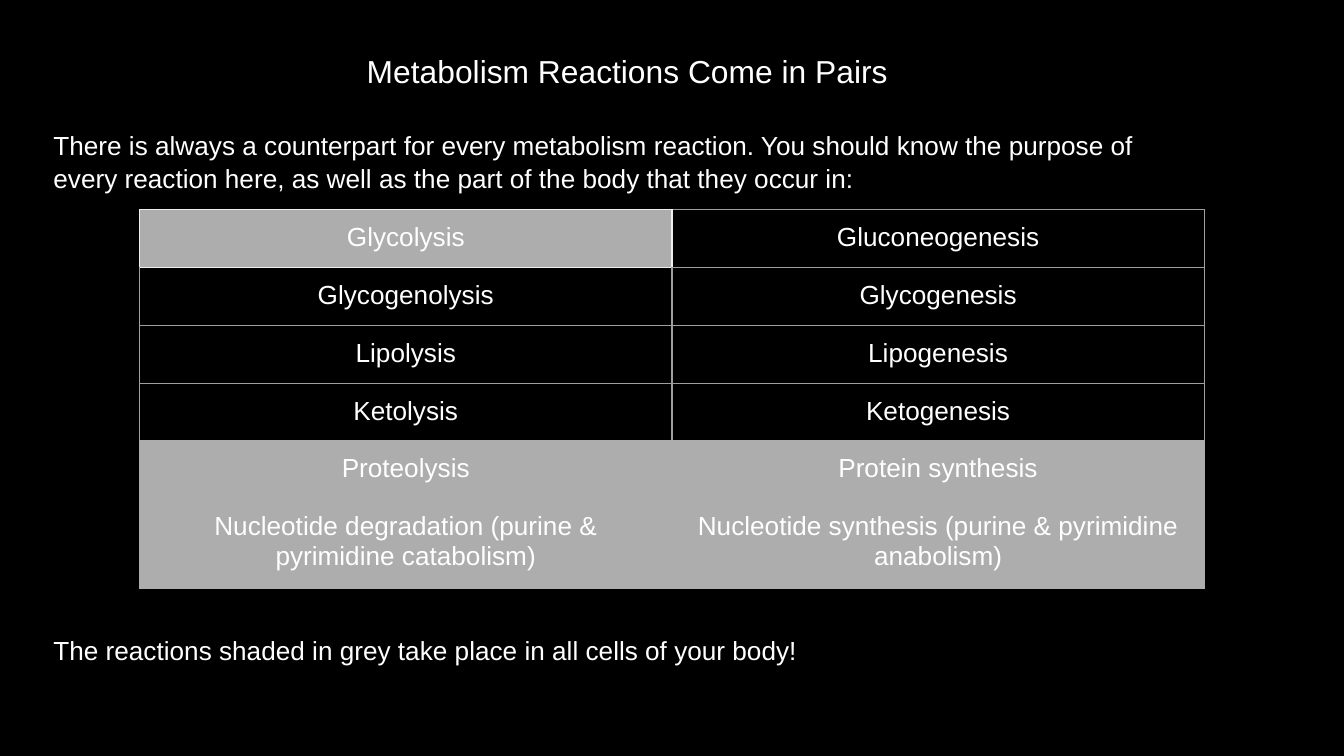
from lxml import etree
from pptx import Presentation
from pptx.dml.color import RGBColor
from pptx.enum.text import PP_ALIGN
from pptx.oxml.ns import qn
from pptx.util import Cm, Pt

CENTER = PP_ALIGN.CENTER
BLACK = RGBColor(0x00, 0x00, 0x00)
WHITE = RGBColor(0xFF, 0xFF, 0xFF)
SHADE = RGBColor(0xAD, 0xAD, 0xAD)
GRID = RGBColor(0x9E, 0x9E, 0x9E)
PALE = RGBColor(0xEE, 0xEE, 0xEE)

FONT = "Arial"
INSET = Cm(0.25)
LINE_SPACING = 1.04
ROW_HEIGHT = Cm(1.09)
LAST_ROW_HEIGHT = Cm(1.68)
COLUMN_WIDTH = Cm(10.06)

TITLE = "Metabolism Reactions Come in Pairs"
INTRO = ("There is always a counterpart for every metabolism reaction. "
         "You should know the purpose of every reaction here, "
         "as well as the part of the body that they occur in:")
CLOSING = "The reactions shaded in grey take place in all cells of your body!"
PAIRS = [
    ("Glycolysis", "Gluconeogenesis"),
    ("Glycogenolysis", "Glycogenesis"),
    ("Lipolysis", "Lipogenesis"),
    ("Ketolysis", "Ketogenesis"),
    ("Proteolysis", "Protein synthesis"),
    ("Nucleotide degradation (purine & pyrimidine catabolism)",
     "Nucleotide synthesis (purine & pyrimidine anabolism)"),
]
FIRST_SHADED_ROW = 4


def style_font(para, size):
    para.font.name = FONT
    para.font.size = Pt(size)
    para.font.color.rgb = WHITE


def set_insets(holder):
    holder.margin_left = holder.margin_right = INSET
    holder.margin_top = holder.margin_bottom = INSET


def add_body_text(page):
    """Title, introduction and closing line, the last one below the table."""
    box = page.shapes.add_textbox(Cm(0.76), Cm(0.71), Cm(20.93), Cm(12.75))
    frame = box.text_frame
    frame.word_wrap = True
    set_insets(frame)
    frame.text = "\n".join([TITLE, INTRO, CLOSING])
    title, intro, closing = frame.paragraphs
    for para, size in ((title, 17), (intro, 14), (closing, 14)):
        para.line_spacing = LINE_SPACING
        style_font(para, size)
    title.alignment = CENTER
    properties = title._p.get_or_add_pPr()
    properties.set("marL", str(Cm(1.27)))
    properties.set("indent", "0")
    intro.space_before = Pt(20.4)
    closing.space_before = Pt(235.5)


def border_colors(row, column):
    """Colours of the left, right, top and bottom edges of a cell."""
    if row >= FIRST_SHADED_ROW:
        return [SHADE] * 4
    if (row, column) == (0, 0):
        return [PALE] * 4
    left = PALE if (row, column) == (0, 1) else GRID
    top = PALE if (row, column) == (1, 0) else GRID
    bottom = SHADE if row == FIRST_SHADED_ROW - 1 else GRID
    return [left, GRID, top, bottom]


def set_borders(cell, colors):
    properties = cell._tc.get_or_add_tcPr()
    for side, color in zip("LRTB", colors):
        line = etree.SubElement(properties, qn(f"a:ln{side}"), w=str(Pt(0.75)))
        fill = etree.SubElement(line, qn("a:solidFill"))
        etree.SubElement(fill, qn("a:srgbClr"), val=str(color))


def fill_cell(cell, text, row, column):
    set_insets(cell)
    cell.text = text
    para = cell.text_frame.paragraphs[0]
    para.alignment = CENTER
    style_font(para, 14)
    set_borders(cell, border_colors(row, column))
    if row >= FIRST_SHADED_ROW or (row, column) == (0, 0):
        cell.fill.solid()
        cell.fill.fore_color.rgb = SHADE
    else:
        cell.fill.background()


def add_pairs_table(page):
    height = ROW_HEIGHT * (len(PAIRS) - 1) + LAST_ROW_HEIGHT
    table = page.shapes.add_table(len(PAIRS), 2, Cm(2.64), Cm(3.96),
                                  COLUMN_WIDTH * 2, height).table
    table.first_row = table.horz_banding = False
    for row, pair in enumerate(PAIRS):
        table.rows[row].height = ROW_HEIGHT
        for column, text in enumerate(pair):
            fill_cell(table.cell(row, column), text, row, column)
    table.rows[len(PAIRS) - 1].height = LAST_ROW_HEIGHT


def main():
    deck = Presentation()
    deck.slide_width, deck.slide_height = Cm(25.4), Cm(14.29)
    page = deck.slides.add_slide(deck.slide_layouts[6])
    page.background.fill.solid()
    page.background.fill.fore_color.rgb = BLACK
    add_body_text(page)
    add_pairs_table(page)
    deck.save("out.pptx")


if __name__ == "__main__":
    main()
